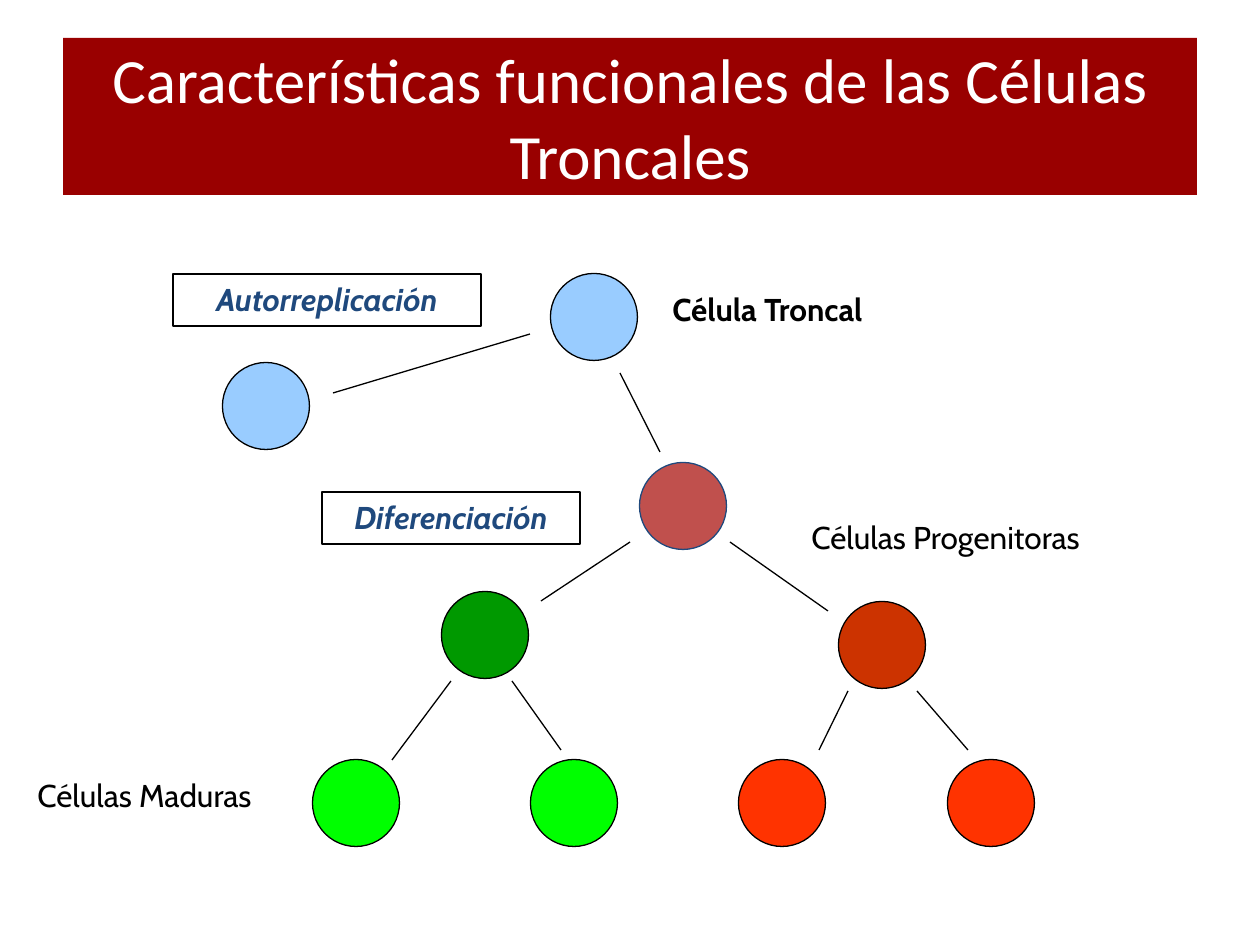
"""Build a slide with the tree of stem, progenitor and mature cells."""
from dataclasses import dataclass

from lxml import etree
from pptx import Presentation
from pptx.dml.color import RGBColor
from pptx.enum.shapes import MSO_CONNECTOR, MSO_SHAPE
from pptx.enum.text import MSO_ANCHOR, MSO_AUTO_SIZE, PP_ALIGN
from pptx.oxml.ns import qn
from pptx.util import Pt

OVAL = MSO_SHAPE.OVAL
STRAIGHT = MSO_CONNECTOR.STRAIGHT
MIDDLE, TOP = MSO_ANCHOR.MIDDLE, MSO_ANCHOR.TOP
CENTER, LEFT = PP_ALIGN.CENTER, PP_ALIGN.LEFT
TITLE_ONLY = 5
SCALE = 914400 / 126


@dataclass(frozen=True)
class Theme:
    banner: str = "990000"
    white: str = "FFFFFF"
    black: str = "000000"
    navy: str = "1F497D"
    stem: str = "99CCFF"
    progenitor: str = "C0504D"
    green_parent: str = "009900"
    green_mature: str = "00FF00"
    red_parent: str = "CC3300"
    red_mature: str = "FF3300"
    title_font: str = "Calibri"
    body_font: str = "Cabin"
    title_size: int = 36
    body_size: int = 18
    line_width: float = 0.75


THEME = Theme()

TITLE = ("Características funcionales de las Células Troncales", (63, 38, 1134, 157))
DIAMETER = 87
CELLS = [
    (594, 317, THEME.stem, THEME.black),
    (266, 406, THEME.stem, THEME.black),
    (683, 506, THEME.progenitor, THEME.navy),
    (485, 635, THEME.green_parent, THEME.black),
    (882, 645, THEME.red_parent, THEME.black),
    (356, 803, THEME.green_mature, THEME.black),
    (574, 803, THEME.green_mature, THEME.black),
    (782, 803, THEME.red_mature, THEME.black),
    (991, 803, THEME.red_mature, THEME.black),
]
BRANCHES = [
    (530, 334, 333, 393),
    (620, 373, 660, 452),
    (630, 542, 541, 601),
    (730, 542, 828, 611),
    (451, 681, 392, 760),
    (512, 681, 561, 750),
    (848, 691, 819, 750),
    (917, 691, 968, 750),
]
LABELS = [
    ("Célula Troncal", (660, 284, 258, 50), True),
    ("Células Progenitoras", (799, 512, 338, 50), False),
    ("Células Maduras", (25, 770, 277, 50), False),
]
PROCESSES = [
    ("Autorreplicación", (173, 274, 308, 52)),
    ("Diferenciación", (322, 492, 258, 52)),
]


def px(*lengths):
    return [round(length * SCALE) for length in lengths]


def paint(shape, color):
    shape.fill.solid()
    shape.fill.fore_color.rgb = RGBColor.from_string(color)


def outline(shape, color):
    shape.line.color.rgb = RGBColor.from_string(color)
    shape.line.width = Pt(THEME.line_width)


def write(box, text, font, size, color, align, anchor, bold=False, italic=False):
    frame = box.text_frame
    frame.word_wrap = True
    frame.vertical_anchor = anchor
    para = frame.paragraphs[0]
    para.alignment = align
    span = para.add_run()
    span.text = text
    span.font.name = font
    span.font.size = Pt(size)
    span.font.bold = bold
    span.font.italic = italic
    span.font.color.rgb = RGBColor.from_string(color)


def add_title(page):
    text, area = TITLE
    title = page.shapes.title
    title.left, title.top, title.width, title.height = px(*area)
    paint(title, THEME.banner)
    write(title, text, THEME.title_font, THEME.title_size, THEME.white, CENTER, MIDDLE)


def add_cell(page, x, y, fill, border):
    corner = x - DIAMETER / 2, y - DIAMETER / 2
    cell = page.shapes.add_shape(OVAL, *px(*corner, DIAMETER, DIAMETER))
    cell.shadow.inherit = False
    paint(cell, fill)
    outline(cell, border)


def add_branch(page, ends):
    branch = page.shapes.add_connector(STRAIGHT, *px(*ends))
    outline(branch, THEME.black)
    etree.SubElement(branch.element.spPr, qn("a:effectLst"))


def add_label(page, text, area, color, align=LEFT, bold=False, italic=False):
    box = page.shapes.add_textbox(*px(*area))
    write(box, text, THEME.body_font, THEME.body_size, color, align, TOP, bold, italic)
    box.text_frame.auto_size = MSO_AUTO_SIZE.SHAPE_TO_FIT_TEXT
    return box


def main():
    deck = Presentation()
    deck.slide_width, deck.slide_height = px(1260, 945)
    page = deck.slides.add_slide(deck.slide_layouts[TITLE_ONLY])
    add_title(page)
    for cell in CELLS:
        add_cell(page, *cell)
    for ends in BRANCHES:
        add_branch(page, ends)
    for text, area, bold in LABELS:
        add_label(page, text, area, THEME.black, bold=bold)
    for text, area in PROCESSES:
        box = add_label(page, text, area, THEME.navy, CENTER, bold=True, italic=True)
        outline(box, THEME.black)
    deck.save("out.pptx")


if __name__ == "__main__":
    main()
